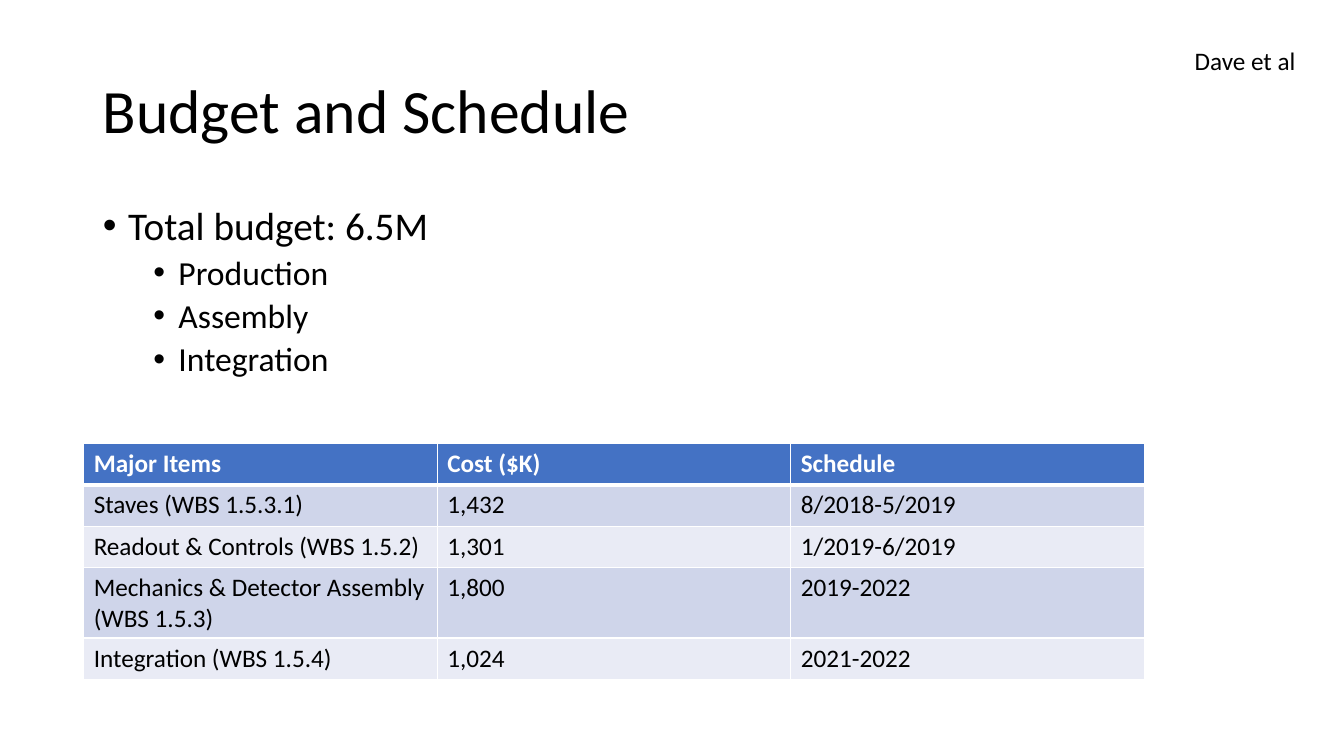
from lxml import etree
from pptx import Presentation
from pptx.dml.color import RGBColor
from pptx.enum.text import MSO_ANCHOR, MSO_AUTO_SIZE, PP_ALIGN
from pptx.oxml.ns import qn
from pptx.util import Inches, Pt

LEFT = PP_ALIGN.LEFT
TOP, MIDDLE = MSO_ANCHOR.TOP, MSO_ANCHOR.MIDDLE
NO_FIT, GROW = MSO_AUTO_SIZE.NONE, MSO_AUTO_SIZE.SHAPE_TO_FIT_TEXT

BLACK, WHITE, BLUE = "000000", "FFFFFF", "4472C4"
BANDS = ("CFD5EA", "E9EBF5")

BULLETS = [
    (0, "Total budget: 6.5M"),
    (1, "Production"),
    (1, "Assembly"),
    (1, "Integration"),
]
ROWS = [
    ("Major Items", "Cost ($K)", "Schedule"),
    ("Staves (WBS 1.5.3.1)", "1,432", "8/2018-5/2019"),
    ("Readout & Controls (WBS 1.5.2)", "1,301", "1/2019-6/2019"),
    ("Mechanics & Detector Assembly (WBS 1.5.3)", "1,800", "2019-2022"),
    ("Integration (WBS 1.5.4)", "1,024", "2021-2022"),
]
HEIGHTS = (0.41, 0.41, 0.41, 0.7, 0.41)


def color(code):
    return RGBColor.from_string(code)


def apply(item, style):
    for name, value in style.items():
        setattr(item, name, value)


class Deck:
    """Holds the style and the current slide."""

    face = "Calibri"

    def __init__(self, width, height):
        self.file = Presentation()
        self.file.slide_width = Inches(width)
        self.file.slide_height = Inches(height)
        self.slide = self.file.slides.add_slide(self.file.slide_layouts[1])

    def font(self, para, size, code=BLACK, bold=False):
        apply(para.font, {"name": self.face, "size": Pt(size), "bold": bold})
        para.font.color.rgb = color(code)

    def place(self, shape, left, top, width, height):
        apply(shape, {"left": Inches(left), "top": Inches(top),
                      "width": Inches(width), "height": Inches(height)})

    def title(self, text, *box):
        shape = self.slide.shapes.title
        self.place(shape, *box)
        frame = shape.text_frame
        frame.text = text
        apply(frame, {"vertical_anchor": MIDDLE, "auto_size": NO_FIT})
        para = frame.paragraphs[0]
        apply(para, {"alignment": LEFT, "line_spacing": 0.9})
        self.font(para, 44)

    def bullets(self, items, *box):
        shape = self.slide.placeholders[1]
        self.place(shape, *box)
        frame = shape.text_frame
        apply(frame, {"vertical_anchor": TOP, "auto_size": NO_FIT})
        frame.text = "\n".join(text for _, text in items)
        for para, (level, _) in zip(frame.paragraphs, items):
            apply(para, {"level": level, "line_spacing": 0.9,
                         "space_before": Pt(5 * level)})
            props = para._p.get_or_add_pPr()
            props.set("marL", str(Inches(0.25 + 0.5 * level)))
            props.set("indent", str(Inches(-0.25)))
            etree.SubElement(props, qn("a:buFont"), typeface="Arial")
            etree.SubElement(props, qn("a:buChar"), char="•")
            self.font(para, 28 - 4 * level)

    def label(self, text, *box):
        shape = self.slide.shapes.add_textbox(*map(Inches, box))
        frame = shape.text_frame
        frame.text = text
        apply(frame, {"word_wrap": False, "auto_size": GROW})
        self.font(frame.paragraphs[0], 18)

    def border(self, cell, row):
        props = cell._tc.get_or_add_tcPr()
        thick = {"T": row == 1, "B": row == 0}
        for side in "LRTB":
            width = Pt(3 if thick.get(side) else 1)
            line = etree.SubElement(props, qn(f"a:ln{side}"), w=str(width))
            fill = etree.SubElement(line, qn("a:solidFill"))
            etree.SubElement(fill, qn("a:srgbClr"), val=WHITE)

    def table(self, rows, heights, left, top, width):
        count = len(rows[0])
        grid = self.slide.shapes.add_table(
            len(rows), count, Inches(left), Inches(top),
            Inches(width), Inches(sum(heights))).table
        for col in grid.columns:
            col.width = Inches(width / count)
        for r, (texts, height) in enumerate(zip(rows, heights)):
            grid.rows[r].height = Inches(height)
            head = r == 0
            for c, text in enumerate(texts):
                cell = grid.cell(r, c)
                cell.text = text
                self.border(cell, r)
                cell.fill.solid()
                cell.fill.fore_color.rgb = color(BLUE if head else BANDS[(r - 1) % 2])
                self.font(cell.text_frame.paragraphs[0], 18,
                          WHITE if head else BLACK, head)


def main():
    deck = Deck(13.33, 7.5)
    # Heading and budget list
    deck.title("Budget and Schedule", 0.92, 0.4, 11.5, 1.45)
    deck.bullets(BULLETS, 0.92, 2, 11.5, 4.76)
    # Author note
    deck.label("Dave et al", 11.75, 0.4, 1.22, 0.4)
    # Cost and schedule table
    deck.table(ROWS, HEIGHTS, 0.83, 4.4, 10.52)
    deck.file.save("out.pptx")


if __name__ == "__main__":
    main()
